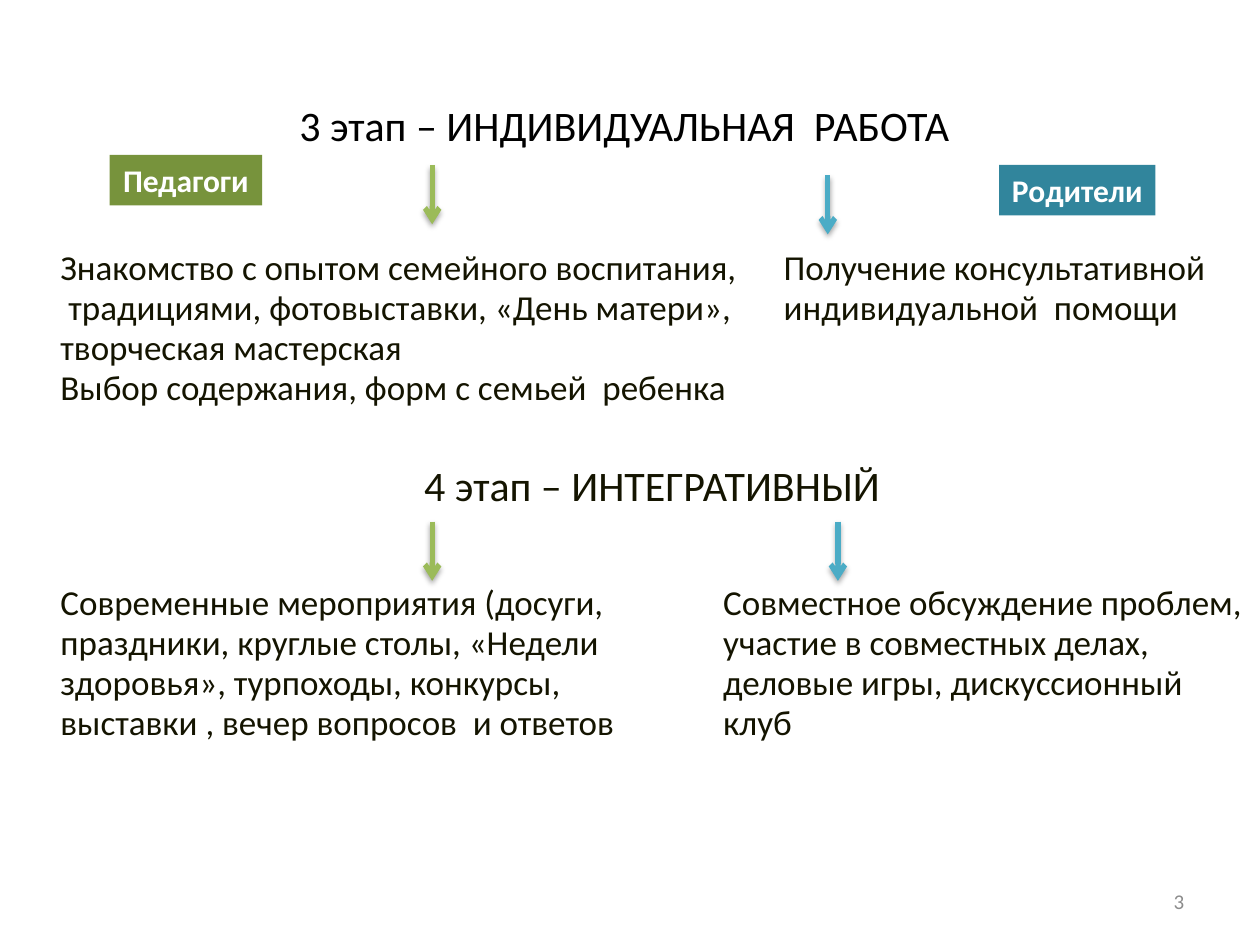
from dataclasses import dataclass

from lxml.etree import SubElement
from pptx import Presentation
from pptx.dml.color import RGBColor
from pptx.enum.shapes import MSO_CONNECTOR, MSO_SHAPE
from pptx.enum.text import MSO_ANCHOR, MSO_AUTO_SIZE, PP_ALIGN
from pptx.oxml.ns import qn
from pptx.util import Inches, Pt

BLACK = RGBColor(0x00, 0x00, 0x00)
WHITE = RGBColor(0xFF, 0xFF, 0xFF)
INK = RGBColor(0x14, 0x14, 0x00)
GRAY = RGBColor(0x8C, 0x8C, 0x8C)
GREEN = RGBColor(0x9B, 0xBB, 0x59)
BLUE = RGBColor(0x4B, 0xAC, 0xC6)
DARK_GREEN = RGBColor(0x77, 0x93, 0x3C)
DARK_BLUE = RGBColor(0x31, 0x85, 0x9C)
FONT = "Calibri"


@dataclass
class TextBlock:
    left: float
    top: float
    width: float
    height: float
    lines: list[str]
    size: int = 20
    color: RGBColor = INK
    align: PP_ALIGN = PP_ALIGN.LEFT
    line_spacing: float = 0.8


@dataclass
class Arrow:
    x: float
    top: float
    color: RGBColor


@dataclass
class Label:
    left: float
    top: float
    width: float
    text: str
    fill: RGBColor


BLOCKS = [
    # Stage 3: teachers and parents
    TextBlock(0.48, 2.01, 5.6, 1.3, [
        "Знакомство с опытом семейного воспитания,",
        " традициями, фотовыставки, «День матери»,",
        "творческая мастерская",
        "Выбор содержания, форм с семьей  ребенка",
    ]),
    TextBlock(6.22, 2.01, 3.78, 0.65, [
        "Получение консультативной",
        "индивидуальной  помощи",
    ]),
    # Stage 4: heading, teachers and parents
    TextBlock(0.43, 3.65, 9.49, 0.41, ["4 этап – ИНТЕГРАТИВНЫЙ"],
              size=24, align=PP_ALIGN.CENTER, line_spacing=1.0),
    TextBlock(0.48, 4.67, 5.0, 1.3, [
        "Современные мероприятия (досуги,",
        "праздники, круглые столы, «Недели",
        "здоровья», турпоходы, конкурсы,",
        "выставки , вечер вопросов  и ответов",
    ]),
    TextBlock(5.74, 4.67, 4.26, 1.3, [
        "Совместное обсуждение проблем,",
        "участие в совместных делах,",
        "деловые игры, дискуссионный",
        "клуб",
    ]),
    # Page number
    TextBlock(7.17, 7.05, 2.23, 0.2, ["3"], size=12, color=GRAY,
              align=PP_ALIGN.RIGHT, line_spacing=1.0),
]
ARROWS = [
    Arrow(3.43, 1.31, GREEN),
    Arrow(6.57, 1.39, BLUE),
    Arrow(3.43, 4.14, GREEN),
    Arrow(6.65, 4.14, BLUE),
]
ARROW_LENGTH = 0.47
LABELS = [
    Label(0.87, 1.23, 1.21, "Педагоги", DARK_GREEN),
    Label(7.93, 1.31, 1.24, "Родители", DARK_BLUE),
]


def style_paragraph(para, size: int, color: RGBColor, align: PP_ALIGN) -> None:
    para.alignment = align
    para.font.name = FONT
    para.font.size = Pt(size)
    para.font.color.rgb = color


def set_title(page, text: str) -> None:
    title = page.shapes.title
    title.left, title.top = Inches(0.83), Inches(0.45)
    title.width, title.height = Inches(8.25), Inches(1.02)
    frame = title.text_frame
    frame.text = text
    frame.auto_size = MSO_AUTO_SIZE.NONE
    frame.vertical_anchor = MSO_ANCHOR.BOTTOM
    frame.margin_left = frame.margin_right = frame.margin_top = 0
    frame.margin_bottom = Inches(0.28)
    style_paragraph(frame.paragraphs[0], 24, BLACK, PP_ALIGN.CENTER)


def add_text_block(page, block: TextBlock) -> None:
    box = page.shapes.add_textbox(Inches(block.left), Inches(block.top),
                                  Inches(block.width), Inches(block.height))
    frame = box.text_frame
    frame.word_wrap = True
    frame.margin_left = frame.margin_right = 0
    frame.margin_top = frame.margin_bottom = 0
    for index, line in enumerate(block.lines):
        para = frame.add_paragraph() if index else frame.paragraphs[0]
        para.text = line
        para.line_spacing = block.line_spacing
        para.space_before = Pt(3.75 if index else 0)
        style_paragraph(para, block.size, block.color, block.align)


def add_arrow(page, arrow: Arrow) -> None:
    x = Inches(arrow.x)
    connector = page.shapes.add_connector(
        MSO_CONNECTOR.STRAIGHT, x, Inches(arrow.top),
        x, Inches(arrow.top + ARROW_LENGTH))
    connector.line.color.rgb = arrow.color
    connector.line.width = Pt(3)
    SubElement(connector.line._get_or_add_ln(), qn("a:tailEnd"), type="arrow")
    # Soft shadow straight below the line
    effects = SubElement(connector._element.spPr, qn("a:effectLst"))
    shadow = SubElement(effects, qn("a:outerShdw"), blurRad=str(Pt(3.1)),
                        dist=str(Pt(1.8)), dir="5400000", rotWithShape="0")
    tint = SubElement(shadow, qn("a:srgbClr"), val=str(BLACK))
    SubElement(tint, qn("a:alpha"), val="35000")


def add_label(page, label: Label) -> None:
    shape = page.shapes.add_shape(
        MSO_SHAPE.RECTANGLE, Inches(label.left), Inches(label.top),
        Inches(label.width), Inches(0.4))
    shape.shadow.inherit = False
    shape.fill.solid()
    shape.fill.fore_color.rgb = label.fill
    shape.line.fill.background()
    frame = shape.text_frame
    frame.word_wrap = False
    frame.auto_size = MSO_AUTO_SIZE.SHAPE_TO_FIT_TEXT
    para = frame.paragraphs[0]
    para.text = label.text
    style_paragraph(para, 18, WHITE, PP_ALIGN.CENTER)
    para.font.bold = True


def main() -> None:
    deck = Presentation()
    deck.slide_width, deck.slide_height = Inches(10), Inches(7.5)
    page = deck.slides.add_slide(deck.slide_layouts.get_by_name("Title Only"))
    set_title(page, "3 этап – ИНДИВИДУАЛЬНАЯ  РАБОТА")
    for block in BLOCKS:
        add_text_block(page, block)
    for arrow in ARROWS:
        add_arrow(page, arrow)
    for label in LABELS:
        add_label(page, label)
    deck.save("out.pptx")


if __name__ == "__main__":
    main()
